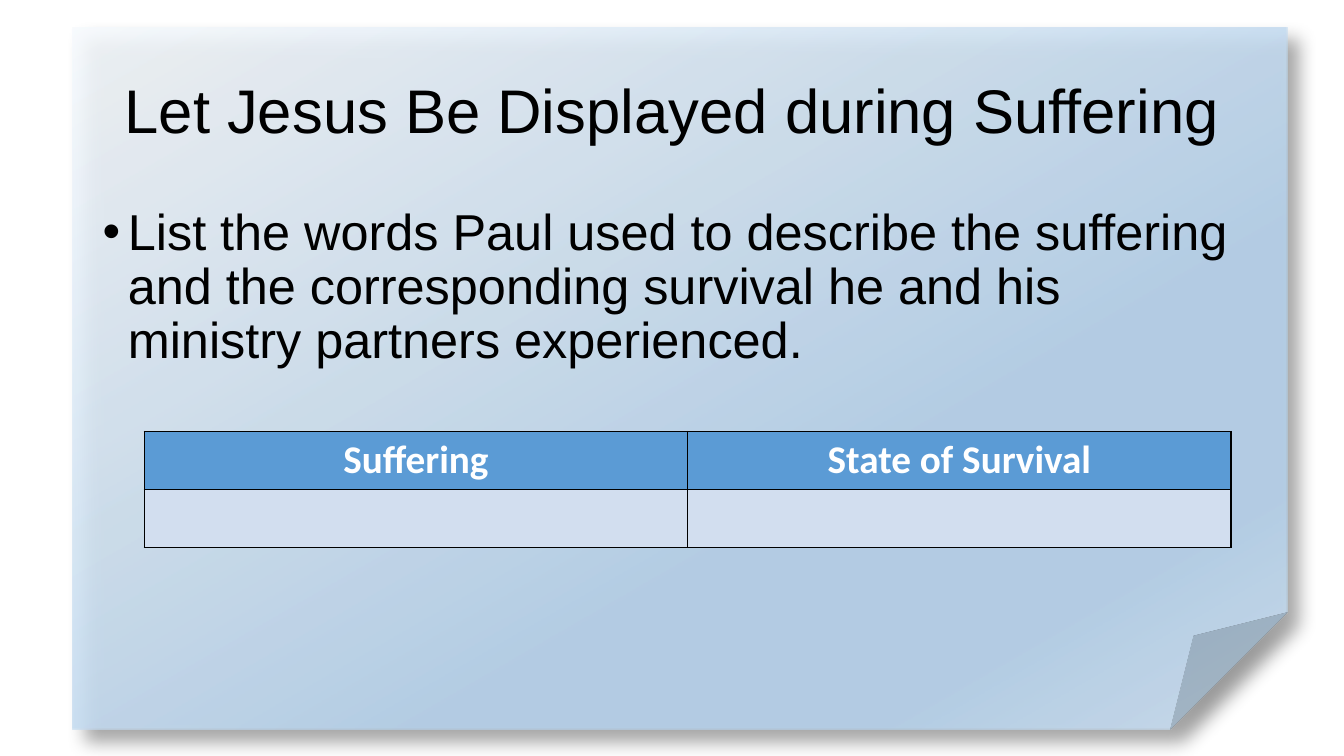
from lxml import etree
from pptx import Presentation
from pptx import util as u
from pptx.dml.color import RGBColor
from pptx.enum import shapes, text
from pptx.oxml.ns import qn

SCALE = 9144
BLACK = RGBColor(0x00, 0x00, 0x00)
WHITE = RGBColor(0xFF, 0xFF, 0xFF)
HEAD = RGBColor(0x5B, 0x9B, 0xD5)
BAND = RGBColor(0xD2, 0xDE, 0xEF)
PALE = RGBColor(0xF7, 0xFA, 0xFD)
SKY = RGBColor(0xB5, 0xD2, 0xEC)
MIST = RGBColor(0xCE, 0xE1, 0xF2)
STOPS = [(0, PALE), (64, SKY), (83, SKY), (100, MIST)]

TITLE = dict(name="Arial", size=u.Pt(44))
BODY = dict(name="Arial", size=u.Pt(36))
LABEL = dict(name="Calibri", size=u.Pt(28), bold=True)


def px(*nums):
    return [u.Emu(n * SCALE) for n in nums]


def sub(node, tag, **attrs):
    return etree.SubElement(node, qn(tag), {k: str(v) for k, v in attrs.items()})


def tint(node, color, alpha):
    sub(sub(node, "a:srgbClr", val=color), "a:alpha", val=alpha * 1000)


def write(frame, words, style, color, align):
    para = frame.paragraphs[0]
    para.alignment = align
    run = para.add_run()
    run.text = words
    for key, value in style.items():
        setattr(run.font, key, value)
    run.font.color.rgb = color
    return para


def add_page(slide, box):
    page = slide.shapes.add_shape(shapes.MSO_SHAPE.FOLDED_CORNER, *px(*box))
    page.line.fill.background()
    page.shadow.inherit = False
    page.fill.gradient()
    page.fill.gradient_angle = 300
    props = page.element.spPr
    stops = props.find(qn("a:gradFill")).find(qn("a:gsLst"))
    for old in list(stops):
        stops.remove(old)
    for place, color in STOPS:
        tint(sub(stops, "a:gs", pos=place * 1000), color, 87)
    shade = sub(props.find(qn("a:effectLst")), "a:outerShdw", blurRad=u.Pt(13),
                dist=u.Pt(13), dir=45 * 60000, algn="tl", rotWithShape=0)
    tint(shade, BLACK, 40)


def add_text(slide, box, words, style, align, anchor):
    frame = slide.shapes.add_textbox(*px(*box)).text_frame
    frame.word_wrap = True
    frame.vertical_anchor = anchor
    para = write(frame, words, style, BLACK, align)
    para.line_spacing = 0.9
    return para


def add_bullet(para):
    props = para._p.get_or_add_pPr()
    props.set("marL", str(25 * SCALE))
    props.set("indent", str(-25 * SCALE))
    sub(props, "a:buFont", typeface="Arial")
    sub(props, "a:buChar", char="•")


def edge(cell):
    props = cell._tc.get_or_add_tcPr()
    for spot, side in enumerate(("a:lnL", "a:lnR", "a:lnT", "a:lnB")):
        line = etree.Element(qn(side), w=str(u.Pt(1)))
        sub(sub(line, "a:solidFill"), "a:srgbClr", val=BLACK)
        props.insert(spot, line)


def add_grid(slide, box, heads):
    grid = slide.shapes.add_table(2, len(heads), *px(*box)).table
    for row, color in enumerate((HEAD, BAND)):
        for col, words in enumerate(heads):
            cell = grid.cell(row, col)
            cell.fill.solid()
            cell.fill.fore_color.rgb = color
            edge(cell)
            if row == 0:
                write(cell.text_frame, words, LABEL, WHITE, text.PP_ALIGN.CENTER)


def main():
    deck = Presentation()
    deck.slide_width, deck.slide_height = px(1333, 750)
    slide = deck.slides.add_slide(deck.slide_layouts[6])
    add_page(slide, (72, 27, 1205, 697))
    add_text(slide, (92, 40, 1150, 145), "Let Jesus Be Displayed during Suffering",
             TITLE, text.PP_ALIGN.CENTER, text.MSO_ANCHOR.MIDDLE)
    task = add_text(slide, (92, 200, 1150, 476),
                    "List the words Paul used to describe the suffering and the "
                    "corresponding survival he and his ministry partners experienced.",
                    BODY, text.PP_ALIGN.LEFT, text.MSO_ANCHOR.TOP)
    add_bullet(task)
    add_grid(slide, (143, 428, 1078, 115), ("Suffering", "State of Survival"))
    deck.save("out.pptx")


if __name__ == "__main__":
    main()
